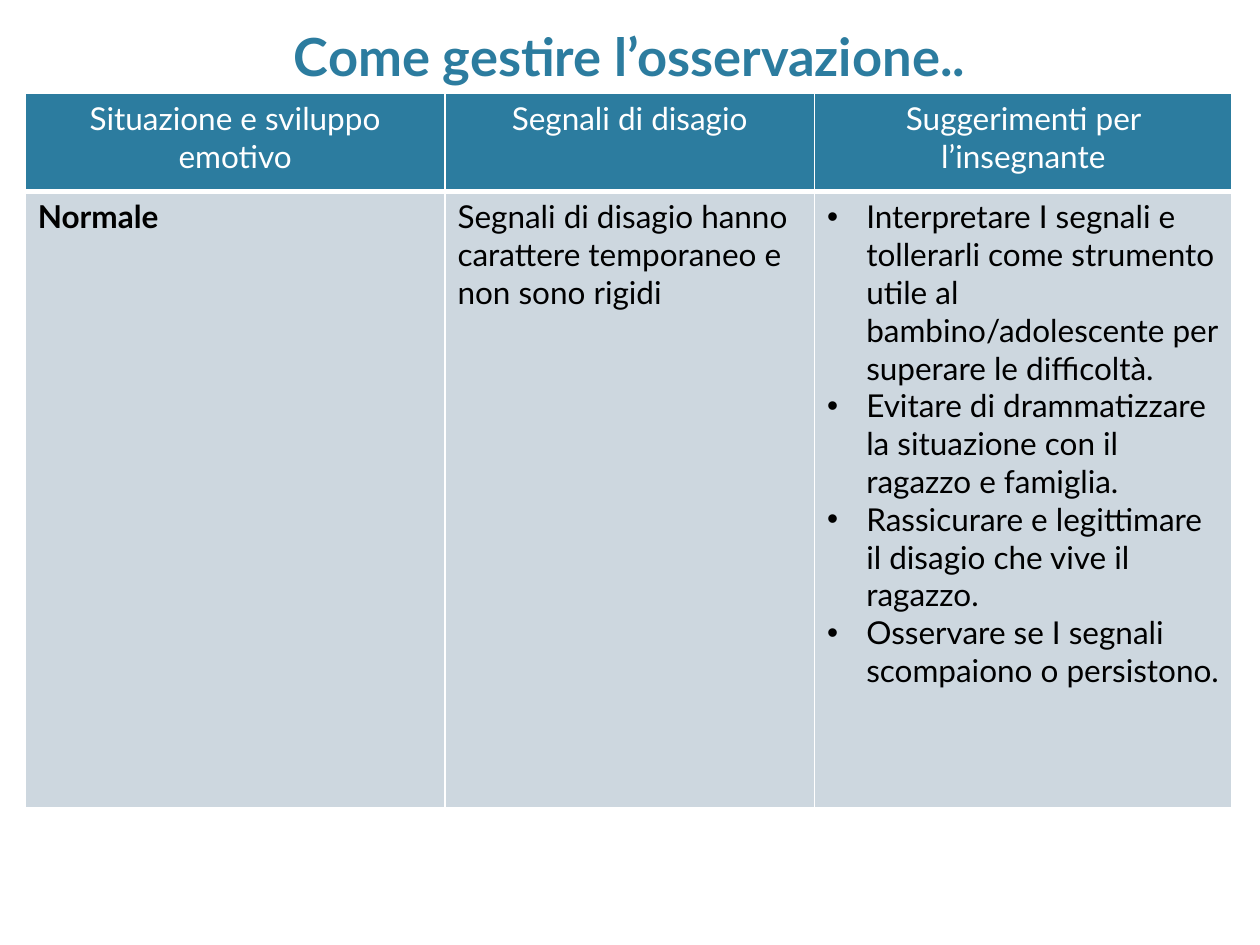
"""Builds a slide with a table on how to handle observation in class."""
import pptx
import pptx.dml.color
import pptx.enum.text
import pptx.oxml
import pptx.oxml.ns
import pptx.util
from lxml import etree
from pptx.util import Cm, Pt

COLORS = {"teal": "2C7C9F", "pale": "CDD7DF", "white": "FFFFFF", "black": "000000"}
FONT = "Lato"
HEADERS = ["Situazione e sviluppo emotivo", "Segnali di disagio", "Suggerimenti per l’insegnante"]
SUGGESTIONS = [
    "Interpretare I segnali e tollerarli come strumento utile al bambino/adolescente per superare le difficoltà.",
    "Evitare di drammatizzare la situazione con il ragazzo e famiglia.",
    "Rassicurare e legittimare il disagio che vive il ragazzo.",
    "Osservare se I segnali scompaiono o persistono.",
]
BODY = ["Normale", "Segnali di disagio hanno carattere temporaneo e non sono rigidi", "\n".join(SUGGESTIONS)]
CENTER = pptx.enum.text.PP_ALIGN.CENTER


def style_paragraph(paragraph, size, color, bold=False, alignment=None):
    paragraph.alignment = alignment
    paragraph.font.name = FONT
    paragraph.font.size = Pt(size)
    paragraph.font.bold = bold
    paragraph.font.color.rgb = pptx.dml.color.RGBColor.from_string(COLORS[color])


def add_borders(cell, bottom_width):
    properties = cell._tc.get_or_add_tcPr()
    for side, width in (("L", 1), ("R", 1), ("T", 1), ("B", bottom_width)):
        line = etree.SubElement(properties, pptx.oxml.ns.qn(f"a:ln{side}"), w=str(Pt(width)))
        fill = etree.SubElement(line, pptx.oxml.ns.qn("a:solidFill"))
        etree.SubElement(fill, pptx.oxml.ns.qn("a:srgbClr"), val=COLORS["white"])


presentation = pptx.Presentation()
presentation.slide_width = Cm(25.4)
presentation.slide_height = Cm(19.05)
slide = presentation.slides.add_slide(presentation.slide_layouts[5])

title = slide.shapes.title
title.left, title.top, title.width, title.height = Cm(1.52), Cm(0.15), Cm(22.35), Cm(1.73)
title.text_frame.text = "Come gestire l’osservazione.."
title.text_frame.vertical_anchor = pptx.enum.text.MSO_ANCHOR.BOTTOM
style_paragraph(title.text_frame.paragraphs[0], 30, "teal", True, CENTER)

table = slide.shapes.add_table(2, 3, Cm(0.51), Cm(1.88), Cm(24.33), Cm(14.4)).table
for column, width in zip(table.columns, (8.46, 7.45, 8.42)):
    column.width = Cm(width)
for row, height in zip(table.rows, (1.98, 12.42)):
    row.height = Cm(height)

for row_index, texts in enumerate((HEADERS, BODY)):
    is_header = row_index == 0
    for column_index, text in enumerate(texts):
        cell = table.cell(row_index, column_index)
        cell.text = text
        add_borders(cell, 3 if is_header else 1)
        cell.fill.solid()
        cell.fill.fore_color.rgb = pptx.dml.color.RGBColor.from_string(COLORS["teal" if is_header else "pale"])
        for paragraph in cell.text_frame.paragraphs:
            if is_header:
                style_paragraph(paragraph, 18, "white", alignment=CENTER)
            else:
                style_paragraph(paragraph, 18, "black", bold=column_index == 0)

for paragraph in table.cell(1, 2).text_frame.paragraphs:
    properties = paragraph._p.get_or_add_pPr()
    properties.set("marL", str(Cm(0.79)))
    properties.set("indent", str(-Cm(0.79)))
    bullet_font = pptx.oxml.parse_xml(f'<a:buFont {pptx.oxml.ns.nsdecls("a")} typeface="Arial"/>')
    bullet = pptx.oxml.parse_xml(f'<a:buChar {pptx.oxml.ns.nsdecls("a")} char="•"/>')
    properties.insert(0, bullet_font)
    properties.insert(1, bullet)

presentation.save("out.pptx")
